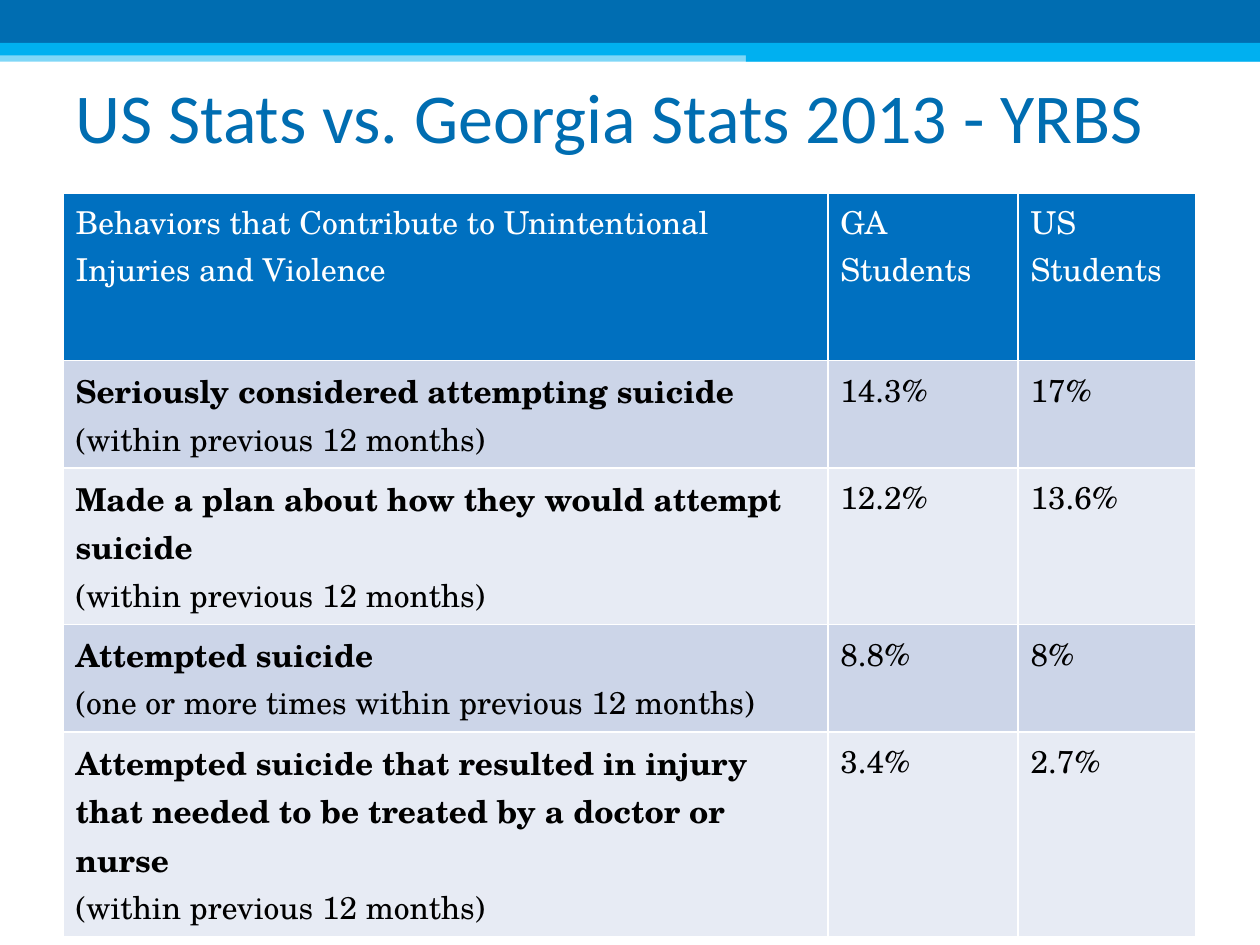
"""Build a slide comparing Georgia and US student survey results in a table."""
from dataclasses import dataclass

from lxml import etree
from pptx import Presentation
from pptx.dml.color import RGBColor
from pptx.enum.shapes import MSO_SHAPE
from pptx.enum.text import MSO_ANCHOR, PP_ALIGN
from pptx.oxml.ns import qn
from pptx.util import Inches, Pt

RECTANGLE = MSO_SHAPE.RECTANGLE
MIDDLE = MSO_ANCHOR.MIDDLE
LEFT = PP_ALIGN.LEFT


@dataclass(frozen=True)
class Theme:
    """Colours, fonts and sizes of the slide."""
    deep: str = "006DB1"
    bright: str = "00B0F0"
    header: str = "0070C0"
    bands: tuple = ("CCD5E8", "E7EBF4")
    white: str = "FFFFFF"
    black: str = "000000"
    title_font: str = "Calibri"
    table_font: str = "TeX Gyre Schola"
    title_size: int = 40
    table_size: int = 18
    border: int = 1


THEME = Theme()
WIDTH, HEIGHT = 10, 7.5
MARGIN = 0.05 * WIDTH
TITLE = "US Stats vs. Georgia Stats 2013 - YRBS"
YEAR = "(within previous 12 months)"
HEADINGS = (
    ["Behaviors that Contribute to Unintentional Injuries and Violence"],
    ["GA", "Students"],
    ["US Students"],
)
BEHAVIORS = (
    ("Seriously considered attempting suicide", YEAR, "14.3%", "17%"),
    ("Made a plan about how they would attempt suicide", YEAR, "12.2%", "13.6%"),
    ("Attempted suicide", "(one or more times within previous 12 months)", "8.8%", "8%"),
    ("Attempted suicide that resulted in injury that needed to be treated "
     "by a doctor or nurse", YEAR, "3.4%", "2.7%"),
)
COLUMN_WIDTHS = (6.07, 1.51, 1.41)
ROW_HEIGHTS = (1.33, 0.79, 1.13, 0.76, 1.13)
BANNER = (
    (0, 0.4, 0.09, THEME.bright, 50),
    (0, 0, 0.34, THEME.deep, 100),
    (0, 0.34, 0.1, THEME.bright, 100),
    (5.92, 0.39, 0.1, THEME.bright, 100),
)


def write(frame, lines, *, font=THEME.table_font, size=THEME.table_size,
          color=THEME.black, bold_first=False):
    """Write one paragraph per line, the first one optionally bold."""
    for index, line in enumerate(lines):
        paragraph = frame.paragraphs[0] if index == 0 else frame.add_paragraph()
        paragraph.alignment = LEFT
        run = paragraph.add_run()
        run.text = line
        run.font.name = font
        run.font.size = Pt(size)
        run.font.bold = bold_first and index == 0
        run.font.color.rgb = RGBColor.from_string(color)


def add_banner(slide):
    """Draw the stripes that run from their left edge to the slide's right."""
    for left, top, height, color, opacity in BANNER:
        stripe = slide.shapes.add_shape(
            RECTANGLE, Inches(left), Inches(top), Inches(WIDTH - left), Inches(height))
        stripe.shadow.inherit = False
        stripe.line.fill.background()
        stripe.fill.solid()
        stripe.fill.fore_color.rgb = RGBColor.from_string(color)
        if opacity < 100:
            tone = stripe.fill._xPr.find(qn("a:solidFill"))[0]
            etree.SubElement(tone, qn("a:alpha"), val=str(opacity * 1000))


def add_title(slide):
    """Place and format the title."""
    title = slide.shapes.title
    title.left, title.top = Inches(MARGIN), Inches(0.33)
    title.width, title.height = Inches(WIDTH - 2 * MARGIN), Inches(1.17)
    title.text_frame.vertical_anchor = MIDDLE
    write(title.text_frame, [TITLE], font=THEME.title_font,
          size=THEME.title_size, color=THEME.deep)


def style_cell(cell, color):
    """Fill a cell and give it white borders."""
    properties = cell._tc.get_or_add_tcPr()
    for side in ("lnL", "lnR", "lnT", "lnB"):
        border = etree.SubElement(properties, qn(f"a:{side}"), w=str(Pt(THEME.border)))
        fill = etree.SubElement(border, qn("a:solidFill"))
        etree.SubElement(fill, qn("a:srgbClr"), val=THEME.white)
    cell.fill.solid()
    cell.fill.fore_color.rgb = RGBColor.from_string(color)


def add_results(slide):
    """Build the table of survey results."""
    table = slide.shapes.add_table(
        len(ROW_HEIGHTS), len(COLUMN_WIDTHS), Inches(MARGIN), Inches(1.53),
        Inches(sum(COLUMN_WIDTHS)), Inches(sum(ROW_HEIGHTS))).table
    for column, width in zip(table.columns, COLUMN_WIDTHS):
        column.width = Inches(width)
    for row, height in zip(table.rows, ROW_HEIGHTS):
        row.height = Inches(height)
    for column, lines in enumerate(HEADINGS):
        cell = table.cell(0, column)
        style_cell(cell, THEME.header)
        write(cell.text_frame, lines, color=THEME.white)
    for row, (behavior, period, georgia, nation) in enumerate(BEHAVIORS, 1):
        for column, lines in enumerate(([behavior, period], [georgia], [nation])):
            cell = table.cell(row, column)
            style_cell(cell, THEME.bands[(row - 1) % 2])
            write(cell.text_frame, lines, bold_first=column == 0)


def main():
    """Assemble and save the slide."""
    deck = Presentation()
    deck.slide_width, deck.slide_height = Inches(WIDTH), Inches(HEIGHT)
    slide = deck.slides.add_slide(deck.slide_layouts[5])
    add_banner(slide)
    add_title(slide)
    add_results(slide)
    deck.save("out.pptx")


if __name__ == "__main__":
    main()
